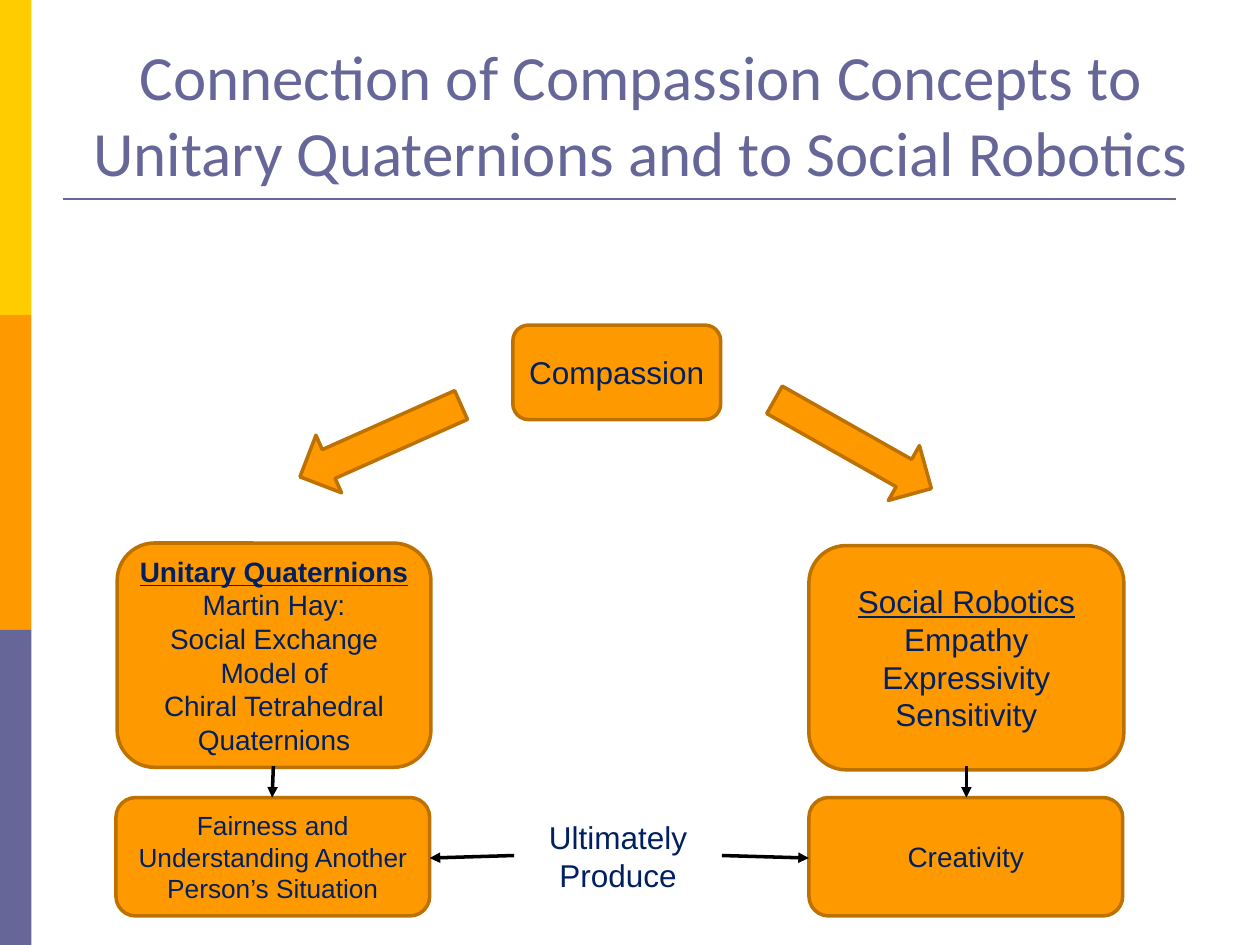
import pptx
import pptx.util
import pptx.dml.color
import pptx.enum.shapes
import pptx.enum.text
import pptx.oxml.ns
import lxml.etree
from dataclasses import dataclass

PX = 9144  # EMU per px: 100 px to the inch
PAGE_WIDTH, PAGE_HEIGHT = 1000, 750
SHAPES = pptx.enum.shapes.MSO_SHAPE
ANCHOR = pptx.enum.text.MSO_ANCHOR


@dataclass(frozen=True)
class Theme:
    title_font: str = "Calibri"
    body_font: str = "Arial"
    yellow: str = "FFCC00"
    orange: str = "FF9900"
    violet: str = "666699"
    edge: str = "BD7100"
    ink: str = "002060"
    black: str = "000000"
    title_size: int = 36
    large: int = 18
    medium: int = 16
    small: int = 15
    rule_width: float = 1.5
    line_width: float = 2


THEME = Theme()


def px(*lengths):
    return [pptx.util.Emu(length * PX) for length in lengths]


def rgb(color):
    return pptx.dml.color.RGBColor.from_string(color)


def write_text(shape, lines, size, font=THEME.body_font, color=THEME.ink,
               anchor=ANCHOR.MIDDLE, margins=(7, 4), heading=False, bold=False):
    """Write centred paragraphs; a heading underlines the first one."""
    frame = shape.text_frame
    frame.word_wrap = True
    frame.auto_size = pptx.enum.text.MSO_AUTO_SIZE.NONE
    frame.vertical_anchor = anchor
    frame.margin_left = frame.margin_right = px(margins[0])[0]
    frame.margin_top = frame.margin_bottom = px(margins[1])[0]
    for index, line in enumerate(lines):
        para = frame.paragraphs[0] if index == 0 else frame.add_paragraph()
        para.alignment = pptx.enum.text.PP_ALIGN.CENTER
        for part, words in enumerate(line.split("\n")):
            if part:
                para.add_line_break()
            span = para.add_run()
            span.text = words
            span.font.name = font
            span.font.size = pptx.util.Pt(size)
            span.font.color.rgb = rgb(color)
            span.font.underline = heading and index == 0
            span.font.bold = bold and index == 0


def add_block(page, kind, box, fill=THEME.orange, edge=THEME.edge, turn=0):
    block = page.shapes.add_shape(kind, *px(*box))
    block.shadow.inherit = False
    block.fill.solid()
    block.fill.fore_color.rgb = rgb(fill)
    if edge:
        block.line.color.rgb = rgb(edge)
        block.line.width = pptx.util.Pt(THEME.line_width)
    else:
        block.line.fill.background()
    block.rotation = turn
    return block


def add_line(page, start, end, color=THEME.black, width=THEME.line_width, arrow=True):
    line = page.shapes.add_connector(
        pptx.enum.shapes.MSO_CONNECTOR.STRAIGHT, *px(*start, *end))
    line.line.color.rgb = rgb(color)
    line.line.width = pptx.util.Pt(width)
    properties = line._element.spPr
    if arrow:
        lxml.etree.SubElement(properties.get_or_add_ln(),
                              pptx.oxml.ns.qn("a:tailEnd"), type="triangle")
    lxml.etree.SubElement(properties, pptx.oxml.ns.qn("a:effectLst"))


def add_side_bands(page, box):
    left, top, width, height = box
    colors = (THEME.yellow, THEME.orange, THEME.violet)
    band = height // len(colors)
    for index, color in enumerate(colors):
        add_block(page, SHAPES.RECTANGLE, (left, top + index * band, width, band),
                  fill=color, edge=None)


def add_title(page, box):
    left, top, width, height = box
    title = page.shapes.title
    title.left, title.top, title.width, title.height = px(*box)
    write_text(title, ["Connection of Compassion Concepts to Unitary Quaternions "
                       "and to Social Robotics"],
               THEME.title_size, font=THEME.title_font, color=THEME.violet,
               anchor=ANCHOR.BOTTOM, margins=(10, 5))
    rule = top + height + 3
    add_line(page, (left + 8, rule), (left + width - 42, rule),
             color=THEME.violet, width=THEME.rule_width, arrow=False)


def add_diagram(page, box):
    left, top, width, height = box

    def place(x, y, w, h):
        return left + x, top + y, w, h

    # Concept boxes: position, lines and text format
    concepts = [
        ((315, 0, 165, 75), ["Compassion"], dict(size=THEME.large)),
        ((1, 173, 249, 178),
         ["Unitary Quaternions", "Martin Hay:\nSocial Exchange Model of\n"
          "Chiral Tetrahedral Quaternions"],
         dict(size=THEME.medium, heading=True, bold=True)),
        ((550, 175, 250, 178),
         ["Social Robotics", "Empathy", "Expressivity", "Sensitivity"],
         dict(size=THEME.large, heading=True)),
        ((0, 375, 249, 94),
         ["Fairness and", "Understanding Another Person’s Situation"],
         dict(size=THEME.small)),
        ((550, 375, 249, 94), ["Creativity"], dict(size=THEME.medium)),
    ]
    for spot, lines, style in concepts:
        block = add_block(page, SHAPES.ROUNDED_RECTANGLE, place(*spot))
        write_text(block, lines, **style)

    # Block arrows from compassion to the two fields
    for spot, turn in (((560, 23, 50, 143), 299.5), ((185, 22, 50, 140), 66)):
        add_block(page, SHAPES.DOWN_ARROW, place(*spot), turn=turn)

    # Label between the outcomes
    label = page.shapes.add_textbox(*px(*place(316, 384, 165, 75)))
    write_text(label, ["Ultimately", "Produce"], THEME.large)

    # Thin arrows to the outcomes
    for x1, y1, x2, y2 in ((316, 421, 249, 423), (481, 421, 550, 423),
                           (125, 350, 124, 375), (675, 350, 675, 375)):
        add_line(page, (left + x1, top + y1), (left + x2, top + y2))


def main():
    deck = pptx.Presentation()
    deck.slide_width, deck.slide_height = px(PAGE_WIDTH, PAGE_HEIGHT)
    page = deck.slides.add_slide(deck.slide_layouts[5])
    add_side_bands(page, (0, 0, 25, PAGE_HEIGHT))
    add_title(page, (42, 30, 933, 125))
    add_diagram(page, (92, 258, 800, 469))
    deck.save("out.pptx")


if __name__ == "__main__":
    main()
